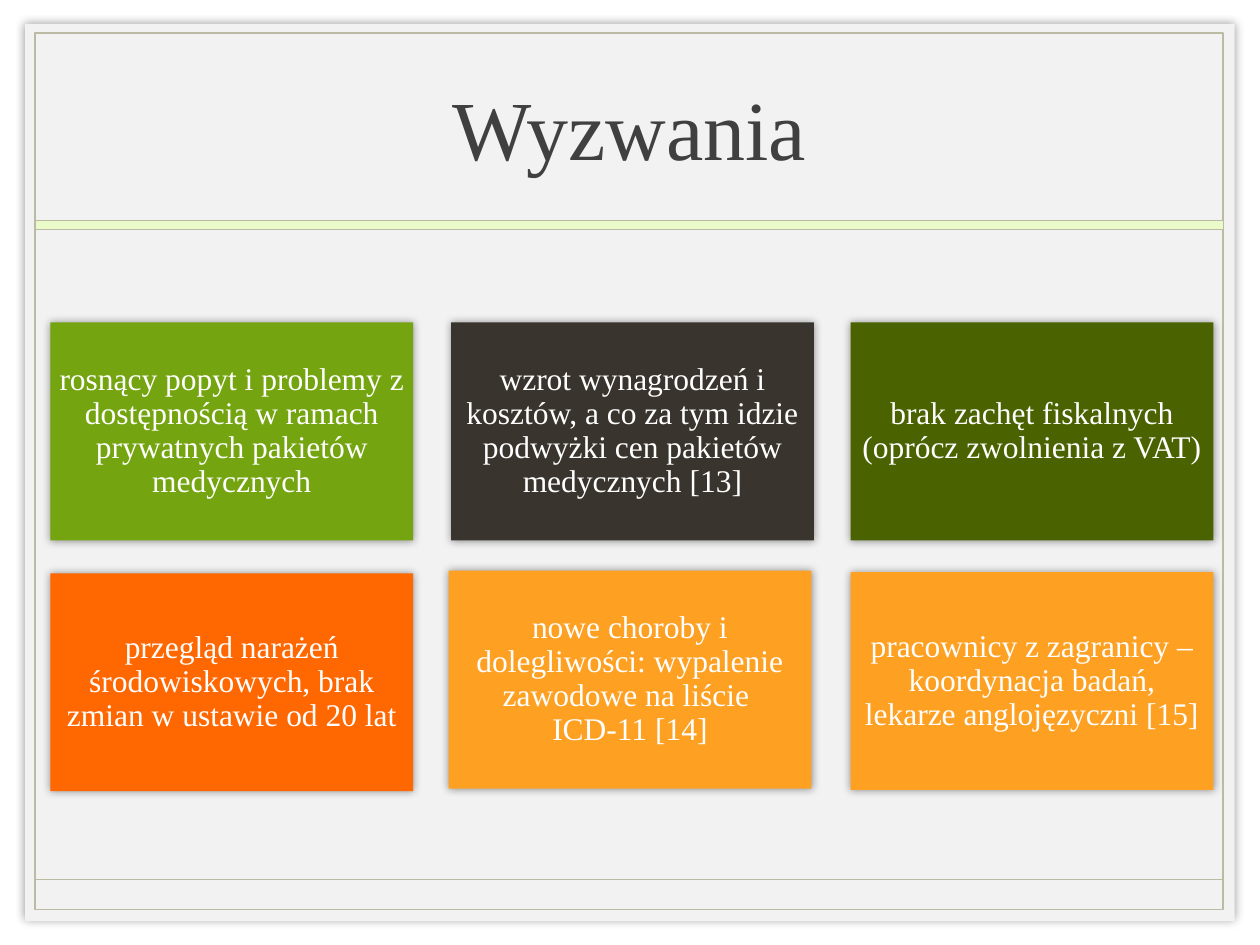
from lxml.etree import SubElement as Sub
from pptx import Presentation
from pptx.dml.color import RGBColor
from pptx.enum.shapes import MSO_CONNECTOR as Link, MSO_SHAPE as Form
from pptx.enum.text import MSO_ANCHOR as Anchor, PP_ALIGN as Align
from pptx.oxml.ns import qn
from pptx.util import Inches, Pt


def paint(part, color):
    part.rgb = RGBColor.from_string(color)


class Deck:
    face = "Times New Roman"
    rule = "BBBAA2"

    def __init__(self, wide, high):
        self.show = Presentation()
        self.show.slide_width = Inches(wide)
        self.show.slide_height = Inches(high)
        self.slide = self.show.slides.add_slide(self.show.slide_layouts[5])

    def box(self, left, top, wide, high, fill=None, line=None, width=1, glow=False):
        place = [Inches(n) for n in (left, top, wide, high)]
        shape = self.slide.shapes.add_shape(Form.RECTANGLE, *place)
        shape.shadow.inherit = False
        if fill:
            shape.fill.solid()
            paint(shape.fill.fore_color, fill)
        else:
            shape.fill.background()
        if line:
            paint(shape.line.color, line)
            shape.line.width = Pt(width)
        else:
            shape.line.fill.background()
        if glow:
            self.shade(shape)
        return shape

    def shade(self, shape):
        effects = shape.element.spPr.find(qn("a:effectLst"))
        outer = Sub(effects, qn("a:outerShdw"), blurRad=str(Pt(5)), dist="0",
                    dir="0", algn="ctr", rotWithShape="0")
        black = Sub(outer, qn("a:srgbClr"), val="000000")
        Sub(black, qn("a:alpha"), val="40000")

    def line(self, left, top, right, base):
        ends = [Inches(n) for n in (left, top, right, base)]
        link = self.slide.shapes.add_connector(Link.STRAIGHT, *ends)
        paint(link.line.color, self.rule)
        link.line.width = Pt(1)
        Sub(link.element.spPr, qn("a:effectLst"))

    def label(self, frame, text, size, color):
        frame.word_wrap = True
        frame.vertical_anchor = Anchor.MIDDLE
        para = frame.paragraphs[0]
        para.text = text
        para.alignment = Align.CENTER
        para.font.name = self.face
        para.font.size = Pt(size)
        paint(para.font.color, color)
        return para

    def title(self, text, left, top, wide, high):
        head = self.slide.shapes.title
        head.left, head.top = Inches(left), Inches(top)
        head.width, head.height = Inches(wide), Inches(high)
        self.label(head.text_frame, text, 48, "404040")
        head.element.getparent().append(head.element)

    def card(self, left, top, fill, text):
        frame = self.box(left, top, 2.88, 1.73, fill, glow=True).text_frame
        frame.margin_left = frame.margin_right = Inches(0.07)
        frame.margin_top = frame.margin_bottom = Inches(0.07)
        para = self.label(frame, text, 18, "FFFFFF")
        para.line_spacing = 0.9
        para.space_after = Pt(6.3)


CARDS = [
    (0.4, 2.56, "74A510", "rosnący popyt i problemy z dostępnością w ramach "
     "prywatnych pakietów medycznych"),
    (3.58, 2.56, "39342D", "wzrot wynagrodzeń i kosztów, a co za tym idzie "
     "podwyżki cen pakietów medycznych [13]"),
    (6.75, 2.56, "4A6300", "brak zachęt fiskalnych (oprócz zwolnienia z VAT)"),
    (0.4, 4.55, "FF6700", "przegląd narażeń środowiskowych, brak zmian "
     "w ustawie od 20 lat"),
    (3.56, 4.53, "FEA022", "nowe choroby i dolegliwości: wypalenie zawodowe "
     "na liście \nICD-11 [14]"),
    (6.75, 4.54, "FEA022", "pracownicy z zagranicy – koordynacja badań, "
     "lekarze anglojęzyczni [15]"),
]


def main():
    deck = Deck(10, 7.5)
    deck.box(0.2, 0.19, 9.6, 7.12, "F2F2F2", glow=True)
    deck.box(0.28, 0.26, 9.43, 6.96, line=deck.rule)
    deck.line(0.28, 6.98, 9.71, 6.98)
    deck.box(0.28, 1.75, 9.43, 0.07, "EAFAC9", deck.rule, 0.25)
    deck.title("Wyzwania", 0.98, 0.27, 8.03, 1.47)
    for card in CARDS:
        deck.card(*card)
    deck.show.save("out.pptx")


if __name__ == "__main__":
    main()
